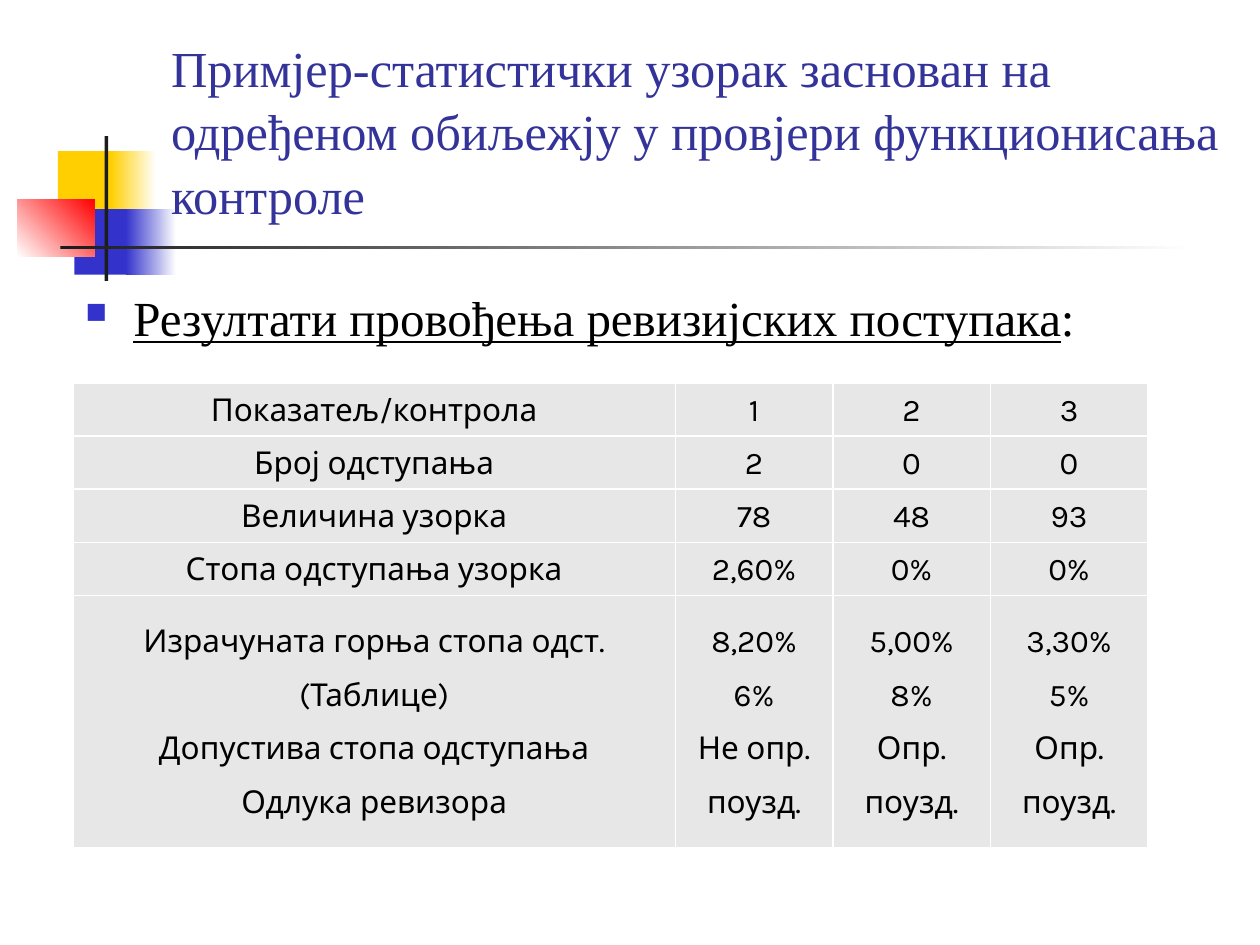
"""Build the slide on statistical sampling results in tests of control."""
from dataclasses import dataclass

from lxml import etree
from pptx import Presentation
from pptx import util as u
from pptx.dml.color import RGBColor
from pptx.enum import shapes, text
from pptx.oxml import parse_xml
from pptx.oxml.ns import nsdecls, qn


@dataclass(frozen=True)
class Theme:
    yellow: str = "FFCF01"
    blue: str = "3333CC"
    red: str = "FF0000"
    dark: str = "1C1C1C"
    white: str = "FFFFFF"
    title: str = "333399"
    ink: str = "000000"
    cell: str = "E7E7E7"
    serif: str = "Times New Roman"
    sans: str = "Karla"
    title_size: float = 28.8
    body_size: float = 28
    table_size: float = 18


theme = Theme()


def write(frame, lines, font, size, color, align=text.PP_ALIGN.LEFT,
          anchor=text.MSO_ANCHOR.TOP, spacing=1.0, after=0, bullet=None):
    """Fill a text frame with lines, each a list of (words, underlined) runs."""
    frame.word_wrap = True
    frame.vertical_anchor = anchor
    for number, runs in enumerate(lines):
        paragraph = frame.paragraphs[0] if number == 0 else frame.add_paragraph()
        paragraph.alignment = align
        paragraph.line_spacing = spacing
        paragraph.space_after = u.Pt(after)
        if bullet:
            properties = paragraph._p.get_or_add_pPr()
            properties.set("marL", str(u.Inches(0.38)))
            properties.set("indent", str(u.Inches(-0.38)))
            for mark in (f'<a:buClr {nsdecls("a")}><a:srgbClr val="{bullet}"/></a:buClr>',
                         f'<a:buSzPct {nsdecls("a")} val="60000"/>',
                         f'<a:buChar {nsdecls("a")} char="■"/>'):
                properties.append(parse_xml(mark))
        for words, underlined in runs:
            run = paragraph.add_run()
            run.text = words
            run.font.name = font
            run.font.size = u.Pt(size)
            run.font.color.rgb = RGBColor.from_string(color)
            run.font.underline = underlined


deck = Presentation()
deck.slide_width, deck.slide_height = u.Inches(10), u.Inches(7.5)
slide = deck.slides.add_slide(deck.slide_layouts[6])

ornament = [
    ((0.46, 1.2, 0.48, 0.52), [theme.yellow], 0),
    ((0.88, 1.2, 0.36, 0.52), [theme.yellow, theme.white], 0),
    ((0.59, 1.66, 0.46, 0.52), [theme.blue], 0),
    ((1, 1.66, 0.4, 0.52), [theme.blue, theme.white], 0),
    ((0.14, 1.58, 0.61, 0.46), [theme.white, theme.red], 45),
    ((0.83, 1.08, 0.03, 1.15), [theme.dark], 0),
    ((0.48, 1.95, 9, 0.03), [theme.dark, theme.white], 0),
]
for place, colors, angle in ornament:
    block = slide.shapes.add_shape(shapes.MSO_SHAPE.RECTANGLE, *map(u.Inches, place))
    block.shadow.inherit = False
    block.line.fill.background()
    if len(colors) == 1:
        block.fill.solid()
        block.fill.fore_color.rgb = RGBColor.from_string(colors[0])
    else:
        block.fill.gradient()
        block.fill.gradient_angle = angle
        for stop, color in zip(block.fill.gradient_stops, colors):
            stop.color.rgb = RGBColor.from_string(color)

heading = slide.shapes.add_textbox(*map(u.Inches, (1.26, 0.23, 8.52, 1.6))).text_frame
heading.margin_right = 0
write(heading, [[("Примјер-статистички узорак заснован на одређеном обиљежју "
                  "у провјери функционисања контроле", False)]],
      font=theme.serif, size=theme.title_size, color=theme.title,
      anchor=text.MSO_ANCHOR.BOTTOM, spacing=1.05)

results = slide.shapes.add_textbox(*map(u.Inches, (0.58, 2.21, 9.21, 4.5))).text_frame
write(results, [[("Резултати провођења ревизијских поступака", True), (":", False)]],
      font=theme.serif, size=theme.body_size, color=theme.ink,
      spacing=1.05, bullet=theme.blue)

findings = [
    ["Показатељ/контрола", "1", "2", "3"],
    ["Број одступања", "2", "0", "0"],
    ["Величина узорка", "78", "48", "93"],
    ["Стопа одступања узорка", "2,60%", "0%", "0%"],
    ["Израчуната горња стопа одст.\n(Таблице)\nДопустива стопа одступања\nОдлука ревизора",
     "8,20%\n6%\nНе опр.\nпоузд.", "5,00%\n8%\nОпр.\nпоузд.", "3,30%\n5%\nОпр.\nпоузд."],
]
table = slide.shapes.add_table(len(findings), 4,
                               *map(u.Inches, (0.58, 3.04, 8.52, 3.68))).table
table.first_row = table.horz_banding = False
for column, width in zip(table.columns, [4.78] + [1.25] * 3):
    column.width = u.Inches(width)
for row, height, values in zip(table.rows, [0.42] * 4 + [2], findings):
    row.height = u.Inches(height)
    for cell, value in zip(row.cells, values):
        write(cell.text_frame, [[(line, False)] for line in value.split("\n")],
              font=theme.sans, size=theme.table_size, color=theme.ink,
              align=text.PP_ALIGN.CENTER, spacing=1.07, after=8)
        cell.vertical_anchor = text.MSO_ANCHOR.MIDDLE
        cell.fill.solid()
        cell.fill.fore_color.rgb = RGBColor.from_string(theme.cell)
        for order, side in enumerate(("lnL", "lnR", "lnT", "lnB")):
            border = etree.Element(qn(f"a:{side}"), w=str(u.Pt(1)))
            paint = etree.SubElement(border, qn("a:solidFill"))
            etree.SubElement(paint, qn("a:srgbClr"), val=theme.white)
            cell._tc.get_or_add_tcPr().insert(order, border)

deck.save("out.pptx")
